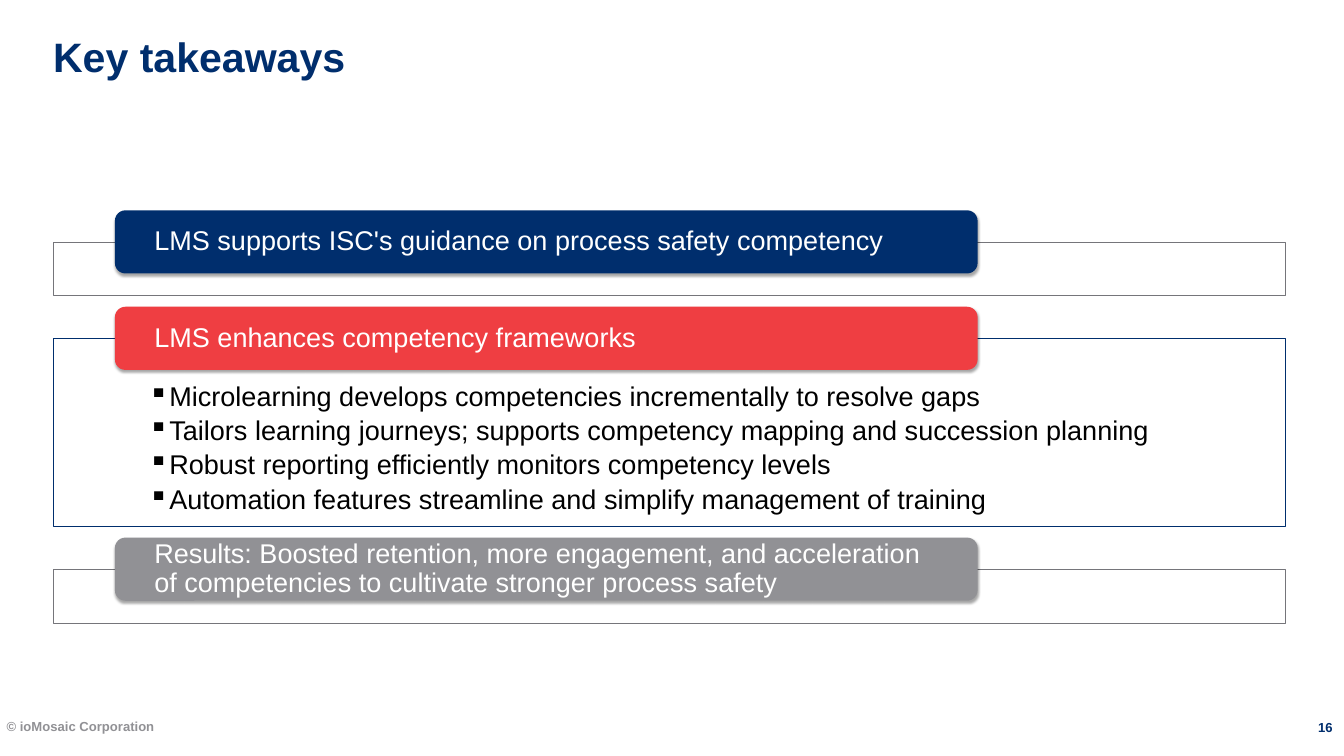
import lxml.etree
import pptx
import pptx.dml.color
import pptx.enum.shapes
import pptx.enum.text
import pptx.oxml
import pptx.oxml.ns
import pptx.util
from pptx.util import Inches

RGBColor = pptx.dml.color.RGBColor
NAVY = RGBColor(0x00, 0x2E, 0x6D)
RED = RGBColor(0xEF, 0x3E, 0x42)
GREY = RGBColor(0x91, 0x91, 0x95)
EDGE = RGBColor(0x75, 0x75, 0x7A)
WHITE = RGBColor(0xFF, 0xFF, 0xFF)
BLACK = RGBColor(0x00, 0x00, 0x00)

SHAPES = pptx.enum.shapes.MSO_SHAPE
ANCHOR = pptx.enum.text.MSO_ANCHOR
ALIGN = pptx.enum.text.PP_ALIGN

LEFT, WIDTH = 0.79, 18.34
TOP, GAP = 3.6, 0.635
RISE = 0.47

CARDS = [
    ("LMS supports ISC's guidance on process safety competency", NAVY, EDGE, 0.8, []),
    ("LMS enhances competency frameworks", RED, NAVY, 2.8, [
        "Microlearning develops competencies incrementally to resolve gaps",
        "Tailors learning journeys; supports competency mapping and succession planning",
        "Robust reporting efficiently monitors competency levels",
        "Automation features streamline and simplify management of training",
    ]),
    ("Results: Boosted retention, more engagement, and acceleration "
     "of competencies to cultivate stronger process safety", GREY, EDGE, 0.8, []),
]


def set_frame(frame, anchor, left, top, right, bottom):
    frame.word_wrap = True
    frame.auto_size = pptx.enum.text.MSO_AUTO_SIZE.NONE
    frame.vertical_anchor = anchor
    frame.margin_left, frame.margin_top = Inches(left), Inches(top)
    frame.margin_right, frame.margin_bottom = Inches(right), Inches(bottom)


def style(para, size, color, bold=False, align=ALIGN.LEFT):
    para.alignment = align
    para.font.name = "Arial"
    para.font.size = pptx.util.Pt(size)
    para.font.color.rgb = color
    para.font.bold = bold


def add_bullet(para):
    props = para._p.get_or_add_pPr()
    props.set("marL", str(Inches(0.31)))
    props.set("indent", str(-Inches(0.31)))
    mark = lxml.etree.SubElement(props, pptx.oxml.ns.qn("a:buChar"))
    mark.set("char", "▪")


def add_shadow(shape):
    shape.shadow.inherit = False
    effects = shape._element.spPr.find(pptx.oxml.ns.qn("a:effectLst"))
    effects.append(pptx.oxml.parse_xml(
        f'<a:outerShdw {pptx.oxml.ns.nsdecls("a")} blurRad="{pptx.util.Pt(3.1)}" '
        f'dist="{pptx.util.Pt(1.8)}" dir="5400000" rotWithShape="0">'
        '<a:srgbClr val="000000"><a:alpha val="35000"/></a:srgbClr></a:outerShdw>'))


def add_title(slide, left, top, width, height):
    title = slide.shapes.title
    title.left, title.top = Inches(left), Inches(top)
    title.width, title.height = Inches(width), Inches(height)
    set_frame(title.text_frame, ANCHOR.TOP, 0, 0, 0.1, 0)
    title.text_frame.text = "Key takeaways"
    style(title.text_frame.paragraphs[0], 44, NAVY, True)


def add_panel(slide, left, top, width, height, edge, points):
    panel = slide.shapes.add_shape(
        SHAPES.RECTANGLE, Inches(left), Inches(top), Inches(width), Inches(height))
    panel.shadow.inherit = False
    panel.fill.solid()
    panel.fill.fore_color.rgb = WHITE
    panel.line.color.rgb = edge
    panel.line.width = pptx.util.Pt(0.75)
    if not points:
        return
    frame = panel.text_frame
    set_frame(frame, ANCHOR.TOP, 1.42, 0.66, 1.42, 0.23)
    frame.text = "\n".join(points)
    for para in frame.paragraphs:
        add_bullet(para)
        para.line_spacing = 0.9
        para.space_after = pptx.util.Pt(5.5)
        style(para, 29, BLACK)


def add_header(slide, left, top, width, height, text, fill):
    header = slide.shapes.add_shape(
        SHAPES.ROUNDED_RECTANGLE, Inches(left), Inches(top), Inches(width), Inches(height))
    add_shadow(header)
    header.fill.solid()
    header.fill.fore_color.rgb = fill
    header.line.fill.background()
    set_frame(header.text_frame, ANCHOR.MIDDLE, 0.54, 0, 0.54, 0)
    header.text_frame.text = text
    para = header.text_frame.paragraphs[0]
    para.line_spacing = 0.9
    style(para, 29, WHITE)


def add_cards(slide, left, top, width):
    for text, fill, edge, height, points in CARDS:
        add_panel(slide, left, top, width, height, edge, points)
        add_header(slide, left + 0.92, top - RISE, width * 0.7, 0.94, text, fill)
        top += height + GAP


def add_note(slide, left, top, width, height, text, color, align, inset):
    box = slide.shapes.add_textbox(
        Inches(left), Inches(top), Inches(width), Inches(height))
    set_frame(box.text_frame, ANCHOR.TOP, 2 * inset, inset, 2 * inset, inset)
    box.text_frame.text = text
    style(box.text_frame.paragraphs[0], 14, color, True, align)


def main():
    deck = pptx.Presentation()
    deck.slide_width, deck.slide_height = Inches(20), Inches(11.25)
    slide = deck.slides.add_slide(deck.slide_layouts.get_by_name("Title Only"))
    add_title(slide, LEFT, 0.47, WIDTH, 1.51)
    add_cards(slide, LEFT, TOP, WIDTH)
    add_note(slide, 0, 10.64, 13.34, 0.6, "© ioMosaic Corporation", GREY, ALIGN.LEFT, 0.05)
    add_note(slide, 19.45, 10.7, 0.55, 0.45, "16", NAVY, ALIGN.CENTER, 0)
    deck.save("out.pptx")


if __name__ == "__main__":
    main()
